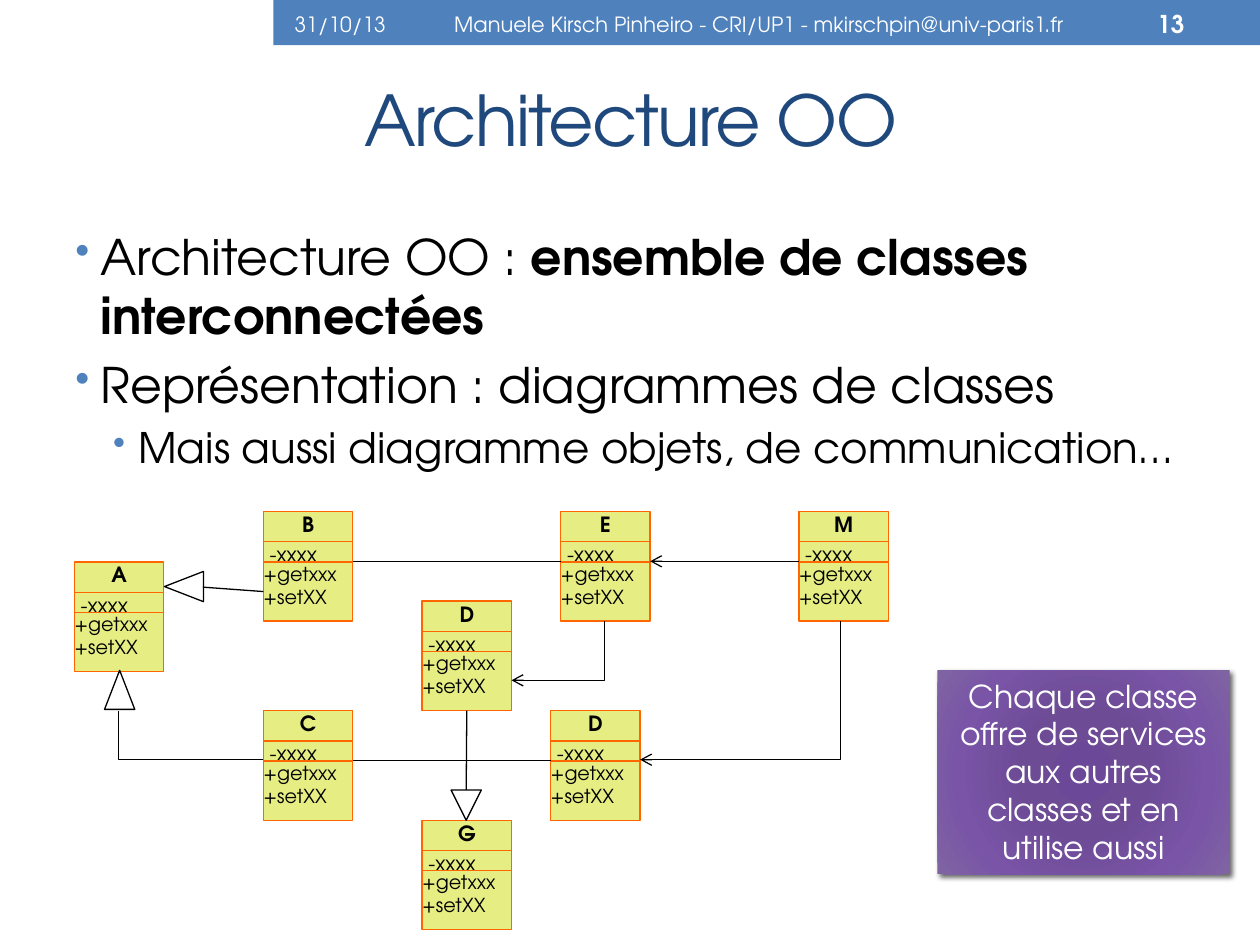
from dataclasses import dataclass

from lxml import etree
from pptx import Presentation
from pptx.dml.color import RGBColor
from pptx.enum.shapes import MSO_CONNECTOR as Link, MSO_SHAPE as Preset
from pptx.enum.text import MSO_ANCHOR as Anchor, MSO_AUTO_SIZE as AutoSize, PP_ALIGN as Align
from pptx.oxml import parse_xml
from pptx.oxml.ns import nsdecls, qn
from pptx.util import Inches, Pt

TOP, LEFT, BOTTOM, RIGHT = range(4)


@dataclass(frozen=True)
class Theme:
    font: str = "TeX Gyre Adventor"
    accent: str = "4F81BD"
    title: str = "1F497D"
    ink: str = "000000"
    paper: str = "FFFFFF"
    class_fill: str = "E5ED83"
    class_line: str = "FF6600"
    note_stops: tuple = ((0, "6C4898"), (34, "6D4B95"), (70, "7954A7"), (100, "8064A2"))
    title_size: int = 40
    body_size: int = 28
    sub_size: int = 24
    note_size: int = 18
    number_size: int = 14
    small_size: int = 12
    method_size: int = 11
    line_width: float = 0.75


def add_span(para, text, *, theme, size, color, bold=False, spacing=None):
    span = para.add_run()
    span.text = text
    span.font.name = theme.font
    span.font.size = Pt(size)
    span.font.bold = bold
    span.font.color.rgb = RGBColor.from_string(color)
    if spacing is not None:
        span.font._element.set("spc", str(spacing))


class Page:
    CLASS_WIDTH = 0.71
    ROW_HEIGHT = 0.31
    METHODS_HEIGHT = 0.47

    def __init__(self, slide, theme):
        self.slide = slide
        self.theme = theme

    def text(self, content, left, top, width, height, *, align=Align.LEFT, **style):
        box = self.slide.shapes.add_textbox(*map(Inches, (left, top, width, height)))
        frame = box.text_frame
        frame.word_wrap = True
        frame.vertical_anchor = Anchor.MIDDLE
        frame.paragraphs[0].alignment = align
        add_span(frame.paragraphs[0], content, theme=self.theme, **style)

    def bullets(self, items, left, top, width, height):
        """Each item is (level, size, [(text, bold), ...])."""
        theme = self.theme
        box = self.slide.shapes.add_textbox(*map(Inches, (left, top, width, height)))
        frame = box.text_frame
        frame.word_wrap = True
        for index, (level, size, spans) in enumerate(items):
            para = frame.add_paragraph() if index else frame.paragraphs[0]
            para.level = level
            para.space_before = Pt(0.2 * size if index else 0)
            settings = para._p.get_or_add_pPr()
            settings.set("marL", str(Inches(0.2 + 0.3 * level)))
            settings.set("indent", str(Inches(-0.2)))
            color = etree.SubElement(settings, qn("a:buClr"))
            etree.SubElement(color, qn("a:srgbClr"), val=theme.accent)
            etree.SubElement(settings, qn("a:buSzPct"), val="85000")
            etree.SubElement(settings, qn("a:buChar"), char="•")
            for text, bold in spans:
                add_span(para, text, theme=theme, size=size, color=theme.ink, bold=bold)

    def shape(self, preset, left, top, width, height, *, fill=None, line=None, parent=None):
        shapes = (parent or self.slide).shapes
        shape = shapes.add_shape(preset, *map(Inches, (left, top, width, height)))
        shape.shadow.inherit = False
        if fill:
            shape.fill.solid()
            shape.fill.fore_color.rgb = RGBColor.from_string(fill)
        else:
            shape.fill.background()
        if line:
            shape.line.color.rgb = RGBColor.from_string(line)
            shape.line.width = Pt(self.theme.line_width)
        else:
            shape.line.fill.background()
        return shape

    def class_box(self, name, left, top):
        """Draw a grouped UML class; return its attribute and method rectangles."""
        theme = self.theme
        group = self.slide.shapes.add_group_shape()
        rows = [
            (0, self.ROW_HEIGHT, [name], theme.small_size, Align.CENTER, 0),
            (0.24, self.ROW_HEIGHT, ["-xxxx"], theme.small_size, Align.LEFT, 0.05),
            (0.4, self.METHODS_HEIGHT, ["+getxxx", "+setXX"], theme.method_size, Align.LEFT, 0),
        ]
        parts = []
        for offset, height, lines, size, align, inset in rows:
            part = self.shape(Preset.RECTANGLE, left, top + offset, self.CLASS_WIDTH, height,
                              fill=theme.class_fill, line=theme.class_line, parent=group)
            frame = part.text_frame
            frame.margin_left = Inches(inset)
            frame.margin_right = frame.margin_top = frame.margin_bottom = 0
            frame.word_wrap = True
            frame.vertical_anchor = Anchor.TOP
            for index, text in enumerate(lines):
                para = frame.add_paragraph() if index else frame.paragraphs[0]
                para.alignment = align
                add_span(para, text, theme=theme, size=size, color=theme.ink, bold=offset == 0)
            parts.append(part)
        return parts[1:]

    def triangle(self, left, top, width, height, rotation=0):
        shape = self.shape(Preset.ISOSCELES_TRIANGLE, left, top, width, height,
                           line=self.theme.ink)
        shape.rotation = rotation

    def connector(self, start=(0, 0), end=(0, 0), *, kind=Link.STRAIGHT,
                  begin_at=None, end_at=None, arrow=None):
        """Join points or (shape, side) pairs; arrow is headEnd or tailEnd."""
        line = self.slide.shapes.add_connector(kind, *map(Inches, (*start, *end)))
        if begin_at:
            line.begin_connect(*begin_at)
        if end_at:
            line.end_connect(*end_at)
        line.line.color.rgb = RGBColor.from_string(self.theme.ink)
        line.line.width = Pt(self.theme.line_width)
        if arrow:
            etree.SubElement(line.line._get_or_add_ln(), qn(f"a:{arrow}"), type="arrow")
        properties = line._element.spPr
        etree.SubElement(properties, qn("a:effectLst"))
        return properties

    def corner(self, start, end, arrow=None):
        """Run horizontally from start, then vertically to end."""
        properties = self.connector(start, end, kind=Link.ELBOW, arrow=arrow)
        properties.find(qn("a:prstGeom")).set("prst", "bentConnector2")

    def note(self, content, left, top, width, height):
        shape = self.shape(Preset.RECTANGLE, left, top, width, height, fill=self.theme.accent)
        stops = "".join(f'<a:gs pos="{place * 1000}"><a:srgbClr val="{color}"/></a:gs>'
                        for place, color in self.theme.note_stops)
        gradient = parse_xml(
            f'<a:gradFill {nsdecls("a")} rotWithShape="1"><a:gsLst>{stops}</a:gsLst>'
            '<a:path path="circle"><a:fillToRect l="100000" t="100000" r="100000" b="100000"/>'
            '</a:path></a:gradFill>')
        properties = shape._element.spPr
        properties.replace(properties.find(qn("a:solidFill")), gradient)
        properties.find(qn("a:effectLst")).append(parse_xml(
            f'<a:outerShdw {nsdecls("a")} blurRad="{Pt(3)}" dist="{Pt(2)}" dir="2700000">'
            f'<a:srgbClr val="{self.theme.ink}"><a:alpha val="60000"/></a:srgbClr></a:outerShdw>'))
        frame = shape.text_frame
        frame.word_wrap = True
        frame.auto_size = AutoSize.SHAPE_TO_FIT_TEXT
        frame.vertical_anchor = Anchor.TOP
        frame.paragraphs[0].alignment = Align.CENTER
        add_span(frame.paragraphs[0], content, theme=self.theme,
                 size=self.theme.note_size, color=self.theme.paper)


def main():
    deck = Presentation()
    deck.slide_width, deck.slide_height = Inches(10), Inches(7.5)
    theme = Theme()
    page = Page(deck.slides.add_slide(deck.slide_layouts[6]), theme)

    page.shape(Preset.RECTANGLE, 2.17, 0, 7.83, 0.36, fill=theme.accent)
    header = dict(size=theme.small_size, color=theme.paper)
    page.text("31/10/13", 2.24, 0.02, 1.1, 0.34, **header)
    page.text("Manuele Kirsch Pinheiro - CRI/UP1 - mkirschpin@univ-paris1.fr",
              3.19, 0.02, 5.67, 0.34, align=Align.CENTER, **header)
    page.text("13", 8.94, 0.02, 0.56, 0.34, align=Align.RIGHT,
              size=theme.number_size, color=theme.paper, bold=True)
    page.text("Architecture OO", 0.51, 0.44, 8.99, 1, align=Align.CENTER,
              size=theme.title_size, color=theme.title, spacing=-100)
    page.bullets([
        (0, theme.body_size, [("Architecture OO : ", False),
                              ("ensemble de classes interconnectées", True)]),
        (0, theme.body_size, [("Représentation : diagrammes de classes", False)]),
        (1, theme.sub_size, [("Mais aussi diagramme objets, de communication…", False)]),
    ], 0.5, 1.75, 9, 5.33)

    page.class_box("A", 0.59, 4.46)
    b_attributes, b_methods = page.class_box("B", 2.09, 4.06)
    c_attributes, _ = page.class_box("C", 2.09, 5.64)
    d_attributes, _ = page.class_box("D", 4.37, 5.64)
    m_attributes, _ = page.class_box("M", 6.34, 4.06)
    e_attributes, _ = page.class_box("E", 4.45, 4.06)
    _, inner_d_methods = page.class_box("D", 3.35, 4.77)
    page.class_box("G", 3.35, 6.51)

    page.triangle(1.34, 4.5, 0.24, 0.31, rotation=270)
    page.triangle(0.83, 5.32, 0.24, 0.31)
    page.triangle(3.58, 6.27, 0.24, 0.24, rotation=180)
    page.connector(begin_at=(b_attributes, RIGHT), end_at=(e_attributes, LEFT))
    page.connector(begin_at=(c_attributes, RIGHT), end_at=(d_attributes, LEFT))
    page.connector(begin_at=(m_attributes, LEFT), end_at=(e_attributes, RIGHT), arrow="tailEnd")
    page.connector(start=(1.61, 4.66), end_at=(b_methods, LEFT))
    page.connector(start=(3.7, 6.27), end_at=(inner_d_methods, BOTTOM))
    page.corner((5.08, 6.03), (6.67, 4.93), arrow="headEnd")
    page.corner((4.06, 5.4), (4.8, 4.93), arrow="headEnd")
    page.corner((2.09, 6.03), (0.94, 5.64))

    page.note("Chaque classe offre de services aux autres classes et en utilise aussi",
              7.44, 5.32, 2.32, 1.62)
    deck.save("out.pptx")


if __name__ == "__main__":
    main()
